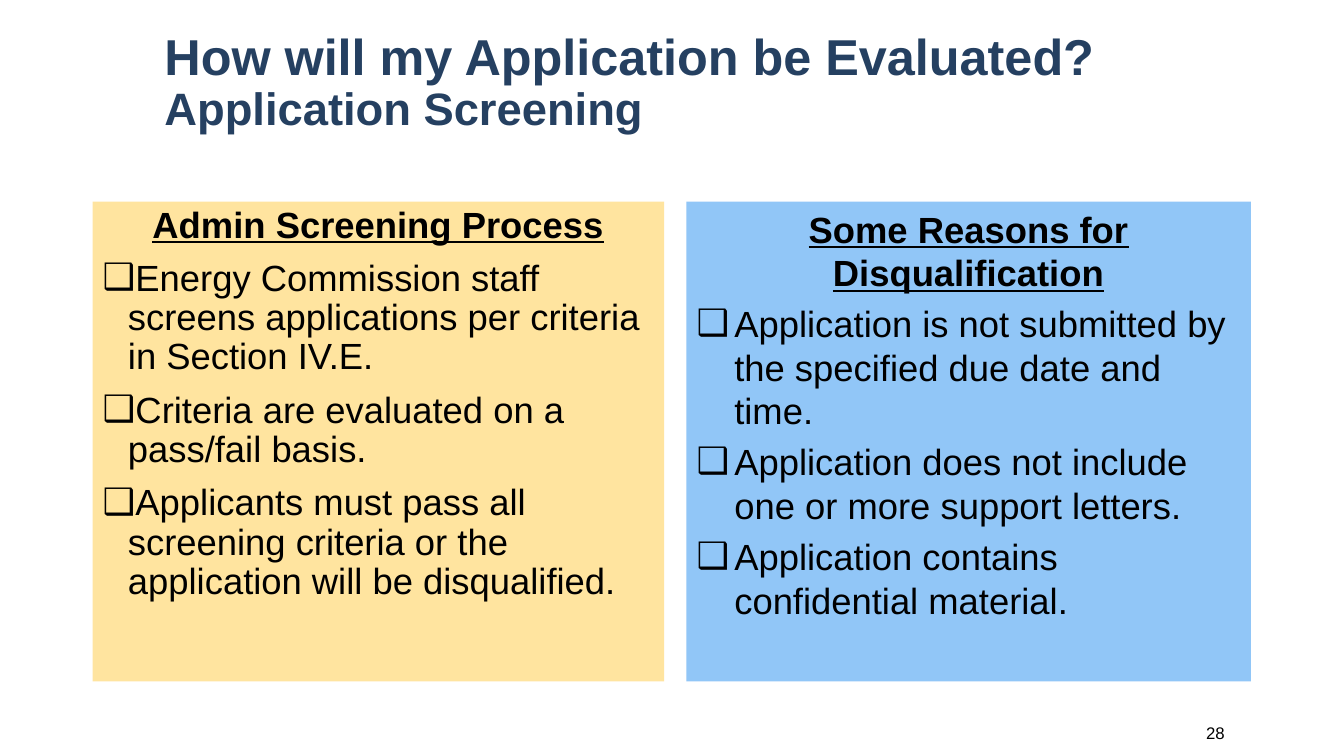
"""Build the application screening slide."""
from lxml import etree
from pptx import Presentation
from pptx.dml.color import RGBColor
from pptx.enum.text import MSO_ANCHOR, MSO_AUTO_SIZE, PP_ALIGN
from pptx.oxml.ns import qn
from pptx.util import Pt

LEFT, CENTER, RIGHT = PP_ALIGN.LEFT, PP_ALIGN.CENTER, PP_ALIGN.RIGHT
TOP, MIDDLE = MSO_ANCHOR.TOP, MSO_ANCHOR.MIDDLE
NO_FIT = MSO_AUTO_SIZE.NONE
COLORS = {"navy": "254061", "black": "000000", "yellow": "FFE49F", "blue": "91C6F7"}


def write(paragraph, text, size=26, color="black", bold=False, underline=False,
          align=LEFT, line=1.0, before=0, indent=0, bullet=None):
    """Add a formatted run to a paragraph and set the paragraph's layout."""
    paragraph.alignment = align
    paragraph.line_spacing = line
    paragraph.space_before = Pt(before)
    properties = paragraph._p.get_or_add_pPr()
    properties.set("marL", str(Pt(indent)))
    properties.set("indent", str(-Pt(indent)))
    if bullet:
        etree.SubElement(properties, qn("a:buFont"), typeface="Arial")
        etree.SubElement(properties, qn("a:buChar"), char=bullet)
    elif not len(paragraph.runs):
        etree.SubElement(properties, qn("a:buNone"))
    run = paragraph.add_run()
    run.text = text
    run.font.name = "Arial"
    run.font.size = Pt(size)
    run.font.bold = bold
    run.font.underline = underline
    run.font.color.rgb = RGBColor.from_string(COLORS[color])


prs = Presentation()
prs.slide_width, prs.slide_height = Pt(960), Pt(540)
slide = prs.slides.add_slide(prs.slide_layouts[3])

title = slide.shapes.title
title.left, title.top, title.width, title.height = Pt(110.2), Pt(18.7), Pt(784), Pt(82)
title.text_frame.auto_size = NO_FIT
title.text_frame.vertical_anchor = MIDDLE
heading = title.text_frame.paragraphs[0]
write(heading, "How will my Application be Evaluated? ", size=36, color="navy", bold=True, line=0.9)
heading.add_line_break()
etree.SubElement(heading._p[-1], qn("a:rPr"), sz="3600")
write(heading, "Application Screening", size=32.4, color="navy", bold=True, line=0.9)

panels = [
    (1, 66.2, 408.2, "yellow", 0.9, 10, 18, "Admin Screening Process", [
        "Energy Commission staff screens applications per criteria in Section IV.E.",
        "Criteria are evaluated on a pass/fail basis.",
        "Applicants must pass all screening criteria or the application will be disqualified.",
    ]),
    (2, 490.3, 403.2, "blue", 1.0, 5.2, 27, "Some Reasons for Disqualification", [
        "Application is not submitted by the specified due date and time.",
        "Application does not include one or more support letters.",
        "Application contains confidential material.",
    ]),
]
for index, left, width, fill, line, before, indent, header, points in panels:
    panel = slide.placeholders[index]
    panel.left, panel.top, panel.width, panel.height = Pt(left), Pt(144), Pt(width), Pt(342.7)
    panel.fill.solid()
    panel.fill.fore_color.rgb = RGBColor.from_string(COLORS[fill])
    frame = panel.text_frame
    frame.auto_size = NO_FIT
    frame.vertical_anchor = TOP
    write(frame.paragraphs[0], header, bold=True, underline=True, align=CENTER, line=line)
    for point in points:
        write(frame.add_paragraph(), point, line=line, before=before, indent=indent, bullet="❑")

page_number = slide.shapes.add_textbox(Pt(743), Pt(509), Pt(139), Pt(28.8)).text_frame
page_number.word_wrap = True
page_number.vertical_anchor = MIDDLE
write(page_number.paragraphs[0], "28", size=12, align=RIGHT)

prs.save("out.pptx")
